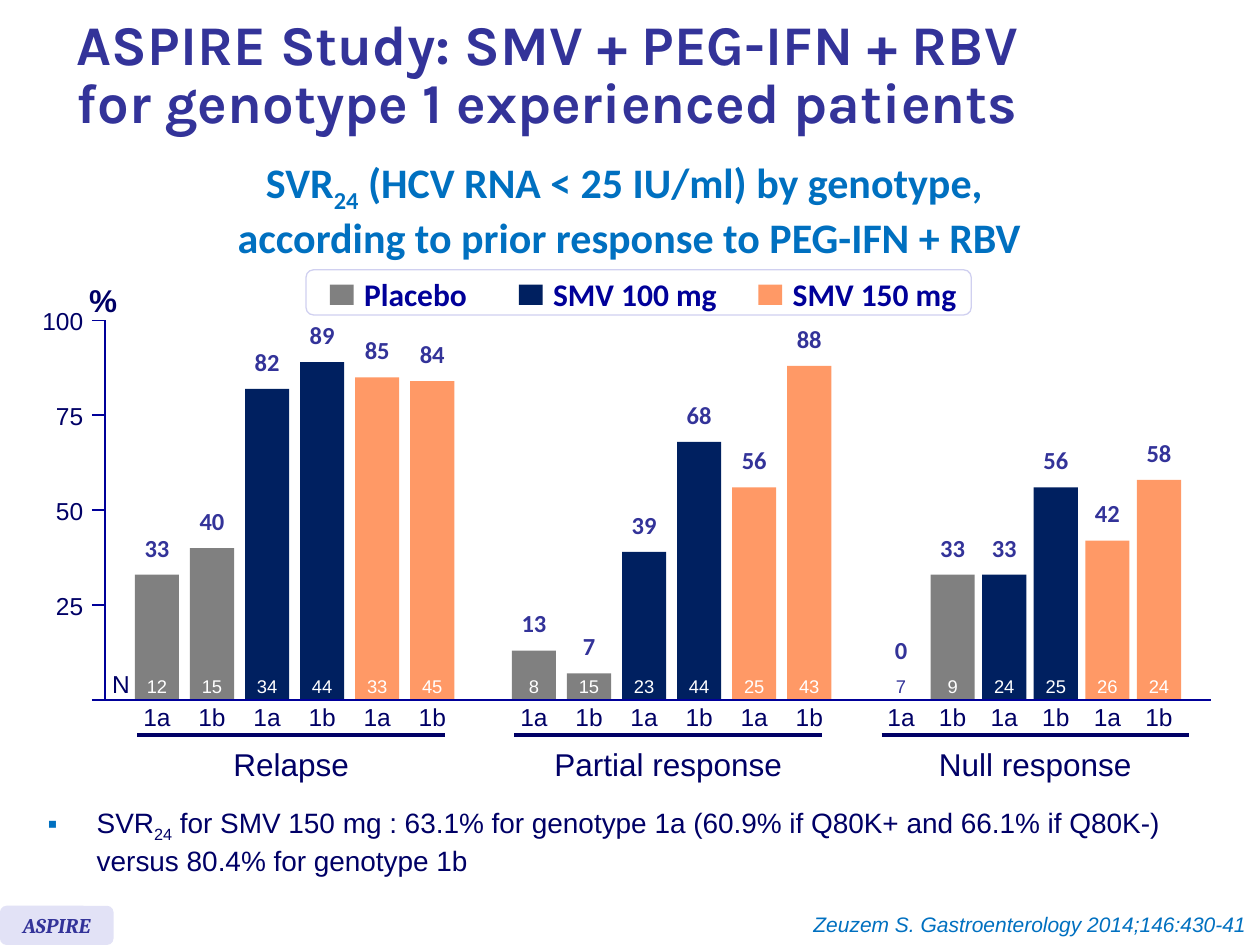
from lxml.etree import SubElement
from pptx import Presentation
from pptx.dml.color import RGBColor
from pptx.enum.shapes import MSO_CONNECTOR as LINE, MSO_SHAPE as SHAPE
from pptx.enum.text import MSO_ANCHOR as ANCHOR, MSO_AUTO_SIZE as FIT, PP_ALIGN as ALIGN
from pptx.oxml.ns import qn
from pptx.util import Cm, Pt

INDIGO = RGBColor(0x33, 0x33, 0x99)
NAVY = RGBColor(0x00, 0x00, 0x66)
AXIS = RGBColor(0x00, 0x00, 0x99)
BLUE = RGBColor(0x00, 0x70, 0xC0)
GRAY = RGBColor(0x80, 0x80, 0x80)
DARK = RGBColor(0x00, 0x20, 0x60)
PEACH = RGBColor(0xFF, 0x99, 0x66)
LILAC = RGBColor(0xE2, 0xE2, 0xF6)
EDGE = RGBColor(0xD0, 0xD0, 0xF0)
WHITE = RGBColor(0xFF, 0xFF, 0xFF)

# Text between underscores is subscript.
TITLE = ["ASPIRE Study: SMV + PEG-IFN + RBV \nfor genotype 1 experienced patients"]
HEAD = ["SVR_24_ (HCV RNA < 25 IU/ml) by genotype, ",
        "according to prior response to PEG-IFN + RBV"]
NOTE = ["SVR_24_ for SMV 150 mg : 63.1% for genotype 1a (60.9% if Q80K+ "
        "and 66.1% if Q80K-) \nversus 80.4% for genotype 1b"]
CITE = ["Zeuzem S. Gastroenterology 2014;146:430-41"]

# Arm, colour, left edge of its legend key
ARMS = [("Placebo", GRAY, 6.65), ("SMV 100 mg", DARK, 10.46), ("SMV 150 mg", PEACH, 15.29)]
GENES = ["1a", "1b"]
# Prior response, left edge, bar pitch, percentages, patient counts
GROUPS = [
    ("Relapse", 2.72, 1.11, [33, 40, 82, 89, 85, 84], [12, 15, 34, 44, 33, 45]),
    ("Partial response", 10.32, 1.11, [13, 7, 39, 68, 56, 88], [8, 15, 23, 44, 25, 43]),
    ("Null response", 17.72, 1.04, [0, 33, 33, 56, 42, 58], [7, 9, 24, 25, 26, 24]),
]
TICKS = [25, 50, 75, 100]

BASE, UNIT = 14.11, 0.0765  # axis height on the slide, cm per percent
BAR = 0.89
LEFT, RIGHT, STEM = 1.85, 24.41, 2.11
LOW = 6  # lowest percentage at which a value label clears the count

deck = Presentation()
deck.slide_width, deck.slide_height = Cm(25.4), Cm(19.05)
slide = deck.slides.add_slide(deck.slide_layouts[1])
shapes = slide.shapes


def write(box, lines, size=14, font="Arial", color=NAVY, bold=False, italic=False,
          align=ALIGN.LEFT, anchor=ANCHOR.TOP, wrap=False, pad=(0.25, 0.13),
          leading=None, gap=0, bullet=None):
    """Fill a shape with paragraphs; newlines break lines within one."""
    frame = box.text_frame
    frame.auto_size, frame.word_wrap, frame.vertical_anchor = FIT.NONE, wrap, anchor
    frame.margin_left = frame.margin_right = Cm(pad[0])
    frame.margin_top = frame.margin_bottom = Cm(pad[1])
    for i, line in enumerate(lines):
        para = frame.add_paragraph() if i else frame.paragraphs[0]
        para.alignment, para.line_spacing = align, leading
        para.space_before = Pt(gap if i else 0)
        if bullet:
            props = para._p.get_or_add_pPr()
            props.set("marL", str(Cm(0.99)))
            props.set("indent", str(Cm(-0.99)))
            tint = SubElement(props, qn("a:buClr"))
            SubElement(tint, qn("a:srgbClr"), val=str(BLUE))
            SubElement(props, qn("a:buChar"), char=bullet)
        for j, part in enumerate(line.split("_")):
            for k, piece in enumerate(part.split("\n")):
                if k:
                    para.add_line_break()
                run = para.add_run()
                run.text = piece
                face = run.font
                face.name, face.size, face.color.rgb = font, Pt(size), color
                face.bold, face.italic = bold, italic
                if j % 2:
                    run._r.get_or_add_rPr().set("baseline", "-25000")


def place(box, x, y, w, h):
    box.left, box.top, box.width, box.height = Cm(x), Cm(y), Cm(w), Cm(h)
    return box


def label(lines, x, y, w, h, **style):
    write(shapes.add_textbox(Cm(x), Cm(y), Cm(w), Cm(h)), lines, **style)


def center(text, mid, y, w, h, **style):
    """Add a label centred on a horizontal position."""
    label([str(text)], mid - w / 2, y, w, h, align=ALIGN.CENTER, **style)


def block(x, y, w, h, fill, edge=None, kind=SHAPE.RECTANGLE):
    box = shapes.add_shape(kind, Cm(x), Cm(y), Cm(w), Cm(h))
    box.shadow.inherit = False
    box.fill.solid()
    box.fill.fore_color.rgb = fill
    if edge:
        box.line.color.rgb, box.line.width = edge, Pt(0.75)
    else:
        box.line.fill.background()
    return box


def rule(x1, y1, x2, y2, color=AXIS, width=1):
    line = shapes.add_connector(LINE.STRAIGHT, Cm(x1), Cm(y1), Cm(x2), Cm(y2))
    line.line.color.rgb, line.line.width = color, Pt(width)
    SubElement(line._element.spPr, qn("a:effectLst"))


def draw_group(name, start, pitch, rates, counts):
    for i, (rate, count) in enumerate(zip(rates, counts)):
        x = start + i * pitch
        mid = x + BAR / 2
        if rate:
            block(x, BASE - rate * UNIT, BAR, rate * UNIT, ARMS[i // 2][1])
        center(rate, mid, BASE - max(rate, LOW) * UNIT - 1.1, 1.02, 1.1,
               font="Calibri", color=INDIGO, bold=True, pad=(0.25, 0.25))
        center(count, mid, 13.49, 0.94, 0.74, size=10.5, color=WHITE if rate else INDIGO)
        center(GENES[i % 2], mid, 14.02, 1.07, 0.86)
    rule(start + 0.05, 14.82, start + 6.25, 14.82, NAVY, 2)
    center(name, start + 3.15, 14.89, 5.1, 1.02, size=18)


def draw_axes():
    for tick in TICKS:
        y = BASE - tick * UNIT
        rule(LEFT, y, STEM, y)
        label([str(tick)], 0.83, y - 0.3, 0.85, 0.61, align=ALIGN.RIGHT,
              anchor=ANCHOR.MIDDLE, pad=(0, 0))
    rule(STEM, BASE - 100 * UNIT, STEM, BASE)
    rule(LEFT, BASE, RIGHT, BASE)
    label(["%"], 1.55, 5.54, 1.07, 1.02, size=18, bold=True)
    label(["N"], 2.01, 13.36, 0.86, 0.86)


def draw_legend():
    block(6.17, 5.44, 13.41, 0.91, WHITE, EDGE, SHAPE.ROUNDED_RECTANGLE)
    for name, color, x in ARMS:
        block(x, 5.74, 0.48, 0.41, color)
        label([name], x + 0.44, 5.41, 3.86, 1.02, size=18, font="Calibri",
              color=AXIS, bold=True)


write(place(shapes.title, 1.3, 0.2, 23.19, 2.72), TITLE, size=32, font="Karla",
      color=INDIGO, bold=True, anchor=ANCHOR.MIDDLE, wrap=True, leading=0.85)
write(place(slide.placeholders[1], 0.71, 16.1, 24, 1.63), NOTE, size=16, wrap=True, bullet="▪")
label(HEAD, 4.47, 3.35, 16.43, 1.98, size=24, font="Calibri", color=BLUE, bold=True,
      align=ALIGN.CENTER, leading=Pt(23.6), gap=3.8)
label(CITE, 15.88, 18.24, 9.5, 0.76, size=12, color=BLUE, italic=True, align=ALIGN.RIGHT)
write(block(0, 18.26, 2.29, 0.79, LILAC, kind=SHAPE.ROUNDED_RECTANGLE), ["ASPIRE"],
      size=12, font="Cambria", color=INDIGO, bold=True, italic=True,
      align=ALIGN.CENTER, anchor=ANCHOR.MIDDLE)
for group in GROUPS:
    draw_group(*group)
draw_axes()
draw_legend()
deck.save("out.pptx")
